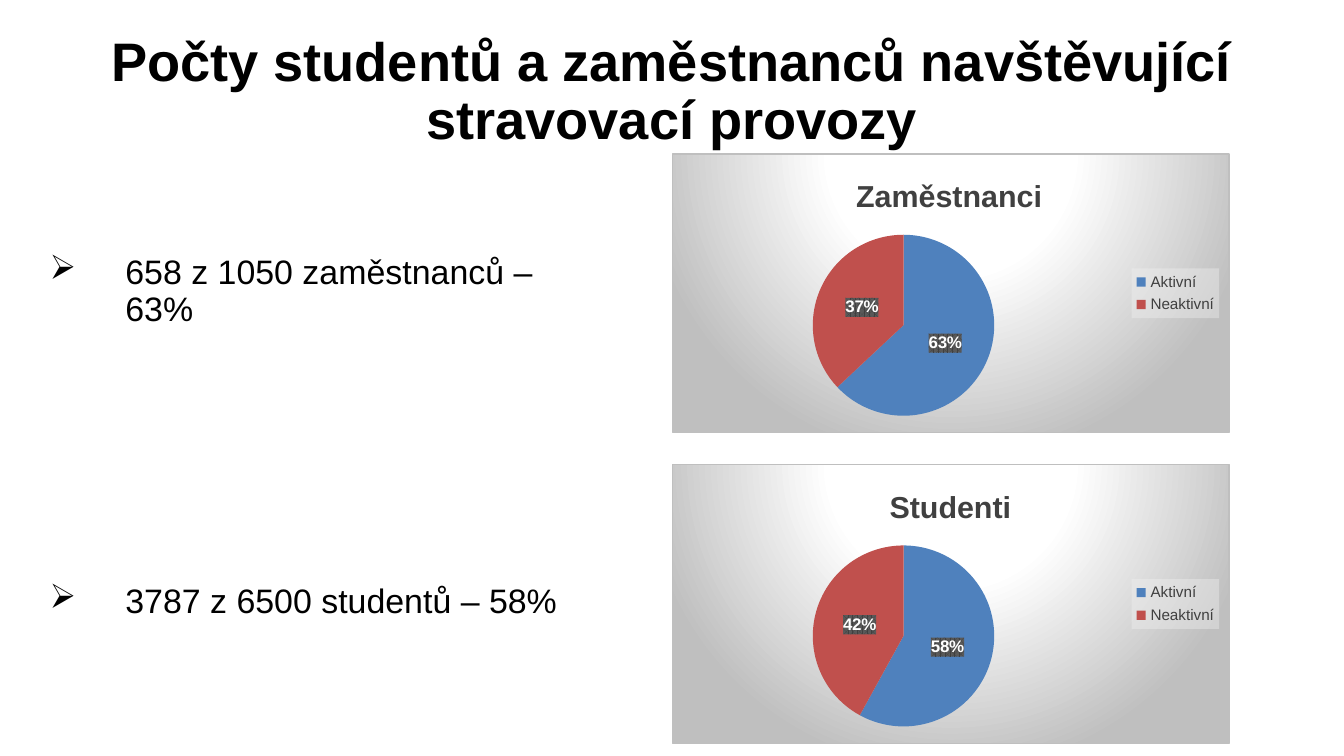
import dataclasses

import pptx
import pptx.chart.data
import pptx.dml.color
import pptx.enum.chart
import pptx.enum.text
import pptx.oxml
import pptx.oxml.ns
import pptx.util

FONT = "Arial"
COLORS = {"text": "000000", "muted": "404040", "active": "4F81BD", "inactive": "C0504D",
          "label": "FFFFFF", "label_weave": "595959", "edge": "BFBFBF", "legend": "F2F2F2"}
SLIDE_WIDTH, SLIDE_HEIGHT = pptx.util.Inches(11.02), pptx.util.Inches(6.2)
ROW_PITCH = 41.1
HEADING = "Počty studentů a zaměstnanců navštěvující stravovací provozy"

CARD_FILL = f"""<a:gradFill><a:gsLst>
<a:gs pos="0"><a:srgbClr val="{COLORS['label']}"/></a:gs>
<a:gs pos="39000"><a:srgbClr val="{COLORS['label']}"/></a:gs>
<a:gs pos="100000"><a:srgbClr val="{COLORS['edge']}"/></a:gs></a:gsLst>
<a:path path="circle"><a:fillToRect l="50000" t="-80000" r="50000" b="180000"/></a:path>
</a:gradFill><a:ln w="9525"><a:solidFill><a:srgbClr val="{COLORS['edge']}"/></a:solidFill></a:ln>"""
LEGEND_FILL = f"""<a:solidFill><a:srgbClr val="{COLORS['legend']}">
<a:alpha val="39000"/></a:srgbClr></a:solidFill>"""
LABEL_FILL = f"""<a:pattFill prst="pct75"><a:fgClr><a:srgbClr val="{COLORS['muted']}"/></a:fgClr>
<a:bgClr><a:srgbClr val="{COLORS['label_weave']}"/></a:bgClr></a:pattFill>"""


@dataclasses.dataclass(frozen=True)
class Area:
    """Place and size in percent of the slide."""
    left: float
    top: float
    width: float
    height: float

    def emu(self, row: int = 0) -> tuple[int, int, int, int]:
        """Return the lengths in EMU, moved down by whole rows."""
        return (round(SLIDE_WIDTH * self.left / 100),
                round(SLIDE_HEIGHT * (self.top + row * ROW_PITCH) / 100),
                round(SLIDE_WIDTH * self.width / 100),
                round(SLIDE_HEIGHT * self.height / 100))


@dataclasses.dataclass(frozen=True)
class Group:
    """One group of diners: its statement and its pie."""
    name: str
    statement: str
    shares: tuple[int, int]
    name_left: float


HEADING_AREA = Area(5, 4.5, 90, 15.6)
STATEMENT_AREA = Area(3.7, 33.7, 41, 9.8)
PIE_AREA = Area(50, 20.3, 41.5, 37)
GROUPS = (Group("Zaměstnanci", "658 z 1050 zaměstnanců – 63%", (63, 37), 0.32),
          Group("Studenti", "3787 z 6500 studentů – 58%", (58, 42), 0.38))


def style_font(font, size: float, color: str, bold: bool = False) -> None:
    """Set family, size, colour and weight."""
    font.name, font.size, font.bold = FONT, pptx.util.Pt(size), bold
    font.color.rgb = pptx.dml.color.RGBColor.from_string(COLORS[color])


def add_text(slide, place: tuple[int, int, int, int], wording: str, size: float, bold: bool = False):
    """Add a one-paragraph text box and return its paragraph."""
    frame = slide.shapes.add_textbox(*place).text_frame
    frame.word_wrap = True
    frame.vertical_anchor = pptx.enum.text.MSO_ANCHOR.MIDDLE
    frame.margin_left = frame.margin_right = frame.margin_top = frame.margin_bottom = 0
    paragraph = frame.paragraphs[0]
    paragraph.line_spacing = 0.9
    run = paragraph.add_run()
    run.text = wording
    style_font(run.font, size, "text", bold)
    return paragraph


def add_bullet(paragraph) -> None:
    """Give a paragraph an arrow bullet with a hanging indent."""
    indent = pptx.util.Inches(0.62)
    properties = paragraph._p.get_or_add_pPr()
    properties.set("marL", str(indent))
    properties.set("indent", str(-indent))
    properties.append(pptx.oxml.parse_xml(
        f'<a:buChar {pptx.oxml.ns.nsdecls("a")} char="➢"/>'))


def paint(element, fill: str) -> None:
    """Put shape properties in front of the text properties of a chart part."""
    element.find(pptx.oxml.ns.qn("c:txPr")).addprevious(pptx.oxml.parse_xml(
        f'<c:spPr {pptx.oxml.ns.nsdecls("c", "a")}>{fill}</c:spPr>'))


def place_part(element, index: int, target: str, **shares: float) -> None:
    """Fix the place of a chart part in shares of the chart."""
    for layout in element.findall(pptx.oxml.ns.qn("c:layout")):
        element.remove(layout)
    modes = '<c:xMode val="edge"/><c:yMode val="edge"/>'
    values = "".join(f'<c:{key} val="{value}"/>' for key, value in shares.items())
    element.insert(index, pptx.oxml.parse_xml(
        f'<c:layout {pptx.oxml.ns.nsdecls("c")}><c:manualLayout>{target}{modes}{values}'
        '</c:manualLayout></c:layout>'))


def add_pie(slide, group: Group, row: int) -> None:
    """Add the pie of active and inactive members of a group."""
    content = pptx.chart.data.CategoryChartData()
    content.categories = ["Aktivní", "Neaktivní"]
    content.add_series("Series 1", group.shares)
    chart = slide.shapes.add_chart(
        pptx.enum.chart.XL_CHART_TYPE.PIE, *PIE_AREA.emu(row), content).chart
    style_font(chart.font, 10, "text")
    paint(chart._chartSpace, CARD_FILL)

    chart.has_title = True
    name = chart.chart_title.text_frame.paragraphs[0].add_run()
    name.text = group.name
    style_font(name.font, 18, "muted", True)
    place_part(chart.chart_title._element, 1, "", x=group.name_left, y=0.06)
    place_part(chart._chartSpace.chart.plotArea, 0, '<c:layoutTarget val="inner"/>',
               x=0.25, y=0.29, w=0.33, h=0.65)

    chart.has_legend = True
    chart.legend.position = pptx.enum.chart.XL_LEGEND_POSITION.RIGHT
    chart.legend.include_in_layout = False
    style_font(chart.legend.font, 9, "muted")
    paint(chart.legend._element, LEGEND_FILL)

    pie = chart.plots[0]
    pie.vary_by_categories = True
    for index, color in enumerate(("active", "inactive")):
        slice_fill = pie.series[0].points[index].format.fill
        slice_fill.solid()
        slice_fill.fore_color.rgb = pptx.dml.color.RGBColor.from_string(COLORS[color])

    pie.has_data_labels = True
    percents = pie.data_labels
    percents.show_value, percents.show_percentage = False, True
    percents.number_format, percents.number_format_is_linked = "0%", False
    percents.position = pptx.enum.chart.XL_LABEL_POSITION.CENTER
    style_font(percents.font, 10, "label", True)
    paint(percents._element, LABEL_FILL)


def main() -> None:
    """Build and save the slide."""
    deck = pptx.Presentation()
    deck.slide_width, deck.slide_height = SLIDE_WIDTH, SLIDE_HEIGHT
    slide = deck.slides.add_slide(deck.slide_layouts[6])
    heading = add_text(slide, HEADING_AREA.emu(), HEADING, 32, True)
    heading.alignment = pptx.enum.text.PP_ALIGN.CENTER
    for row, group in enumerate(GROUPS):
        add_bullet(add_text(slide, STATEMENT_AREA.emu(row), group.statement, 20))
        add_pie(slide, group, row)
    deck.save("out.pptx")


if __name__ == "__main__":
    main()
